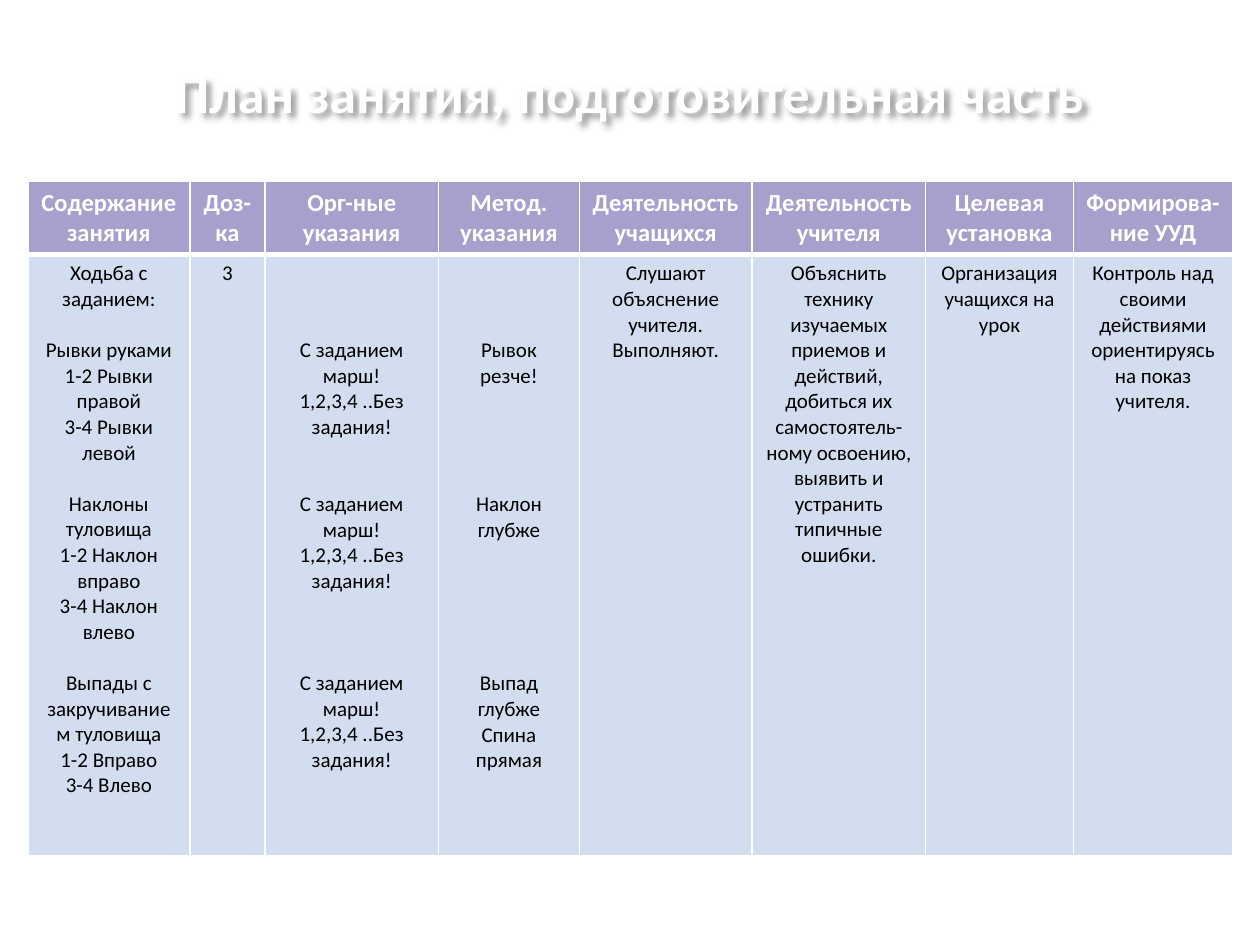
from lxml.etree import SubElement
from pptx import Presentation
from pptx.dml.color import RGBColor
from pptx.enum.text import MSO_ANCHOR, PP_ALIGN
from pptx.oxml.ns import qn
from pptx.util import Cm, Pt

WHITE = RGBColor(0xFF, 0xFF, 0xFF)
BLACK = RGBColor(0, 0, 0)
PURPLE = RGBColor(0xA8, 0x9F, 0xCD)
BLUE = RGBColor(0xD2, 0xDE, 0xEF)
FONT = "Calibri"
LINE = 14.65  # height of one 12 pt line, in points

TITLE = "План занятия, подготовительная часть"
MARCH = "С заданием марш!"
COUNT = "1,2,3,4 ..Без задания!"

# Column: width in cm, heading, body as (empty lines above, text)
COLS = [
    (3.27, "Содержание занятия", [
        (0, "Ходьба с заданием:"),
        (1, "Рывки руками"), (0, "1-2 Рывки правой"), (0, "3-4 Рывки левой"),
        (1, "Наклоны туловища"), (0, "1-2 Наклон вправо"), (0, "3-4 Наклон влево"),
        (1, "Выпады с закручиванием туловища"), (0, "1-2 Вправо"), (0, "3-4 Влево")]),
    (1.51, "Доз-ка", [(0, "3")]),
    (3.5, "Орг-ные указания", [
        (3, MARCH), (0, COUNT), (2, MARCH), (0, COUNT), (3, MARCH), (0, COUNT)]),
    (2.84, "Метод. указания", [
        (3, "Рывок резче!"), (4, "Наклон глубже"),
        (5, "Выпад глубже"), (0, "Спина прямая")]),
    (3.48, "Деятельность учащихся", [(0, "Слушают объяснение учителя. Выполняют.")]),
    (3.5, "Деятельность учителя", [
        (0, "Объяснить технику изучаемых приемов и действий, добиться их "
            "самостоятель-ному освоению, выявить и устранить типичные ошибки.")]),
    (2.98, "Целевая установка", [(0, "Организация учащихся на урок")]),
    (3.21, "Формирова-ние УУД", [
        (0, "Контроль над своими действиями ориентируясь на показ учителя.")]),
]
ROWS = (1.47, 12.12)


def write(para, text, size, color, bold):
    para.alignment = PP_ALIGN.CENTER
    run = para.add_run()
    run.text = text
    run.font.name = FONT
    run.font.size = Pt(size)
    run.font.bold = bold
    run.font.color.rgb = color


def solid(parent, color):
    fill = SubElement(parent, qn("a:solidFill"))
    return SubElement(fill, qn("a:srgbClr"), val=str(color))


def fill_cell(cell, items, size, color, bold, back, top, bottom):
    # Empty lines above the first paragraph become the cell's top margin
    cell.margin_top = Cm(0.13) + Pt(items[0][0] * LINE)
    frame = cell.text_frame
    for i, (gap, text) in enumerate(items):
        para = frame.add_paragraph() if i else frame.paragraphs[0]
        if i and gap:
            para.space_before = Pt(gap * LINE)
        write(para, text, size, color, bold)
    # Borders come before the fill in the cell properties
    props = cell._tc.get_or_add_tcPr()
    for tag, width in (("lnL", 1), ("lnR", 1), ("lnT", top), ("lnB", bottom)):
        solid(SubElement(props, qn("a:" + tag), w=str(Pt(width))), WHITE)
    cell.fill.solid()
    cell.fill.fore_color.rgb = back


deck = Presentation()
deck.slide_width, deck.slide_height = Cm(25.4), Cm(19.05)
slide = deck.slides.add_slide(deck.slide_layouts[6])

# Title with a soft shadow
box = slide.shapes.add_textbox(Cm(0.86), Cm(0.41), Cm(23.65), Cm(3.2))
frame = box.text_frame
frame.word_wrap = True
frame.vertical_anchor = MSO_ANCHOR.MIDDLE
frame.paragraphs[0].line_spacing = 0.7
write(frame.paragraphs[0], TITLE, 31, WHITE, True)
effect = SubElement(box._element.spPr, qn("a:effectLst"))
shade = SubElement(effect, qn("a:outerShdw"), blurRad=str(Pt(3)),
                   dist=str(Pt(3)), dir="2700000", algn="tl", rotWithShape="0")
SubElement(solid(shade, BLACK), qn("a:alpha"), val="40000")
color = shade[0][0]
shade.replace(shade[0], color)

# Lesson plan table
total = sum(col[0] for col in COLS)
table = slide.shapes.add_table(2, len(COLS), Cm(0.56), Cm(3.66),
                               Cm(total), Cm(sum(ROWS))).table
table.horz_banding = False
for row, height in zip(table.rows, ROWS):
    row.height = Cm(height)
for i, (width, head, body) in enumerate(COLS):
    table.columns[i].width = Cm(width)
    fill_cell(table.cell(0, i), [(0, head)], 14, WHITE, True, PURPLE, 1, 3)
    fill_cell(table.cell(1, i), body, 12, BLACK, False, BLUE, 3, 1)

deck.save("out.pptx")
